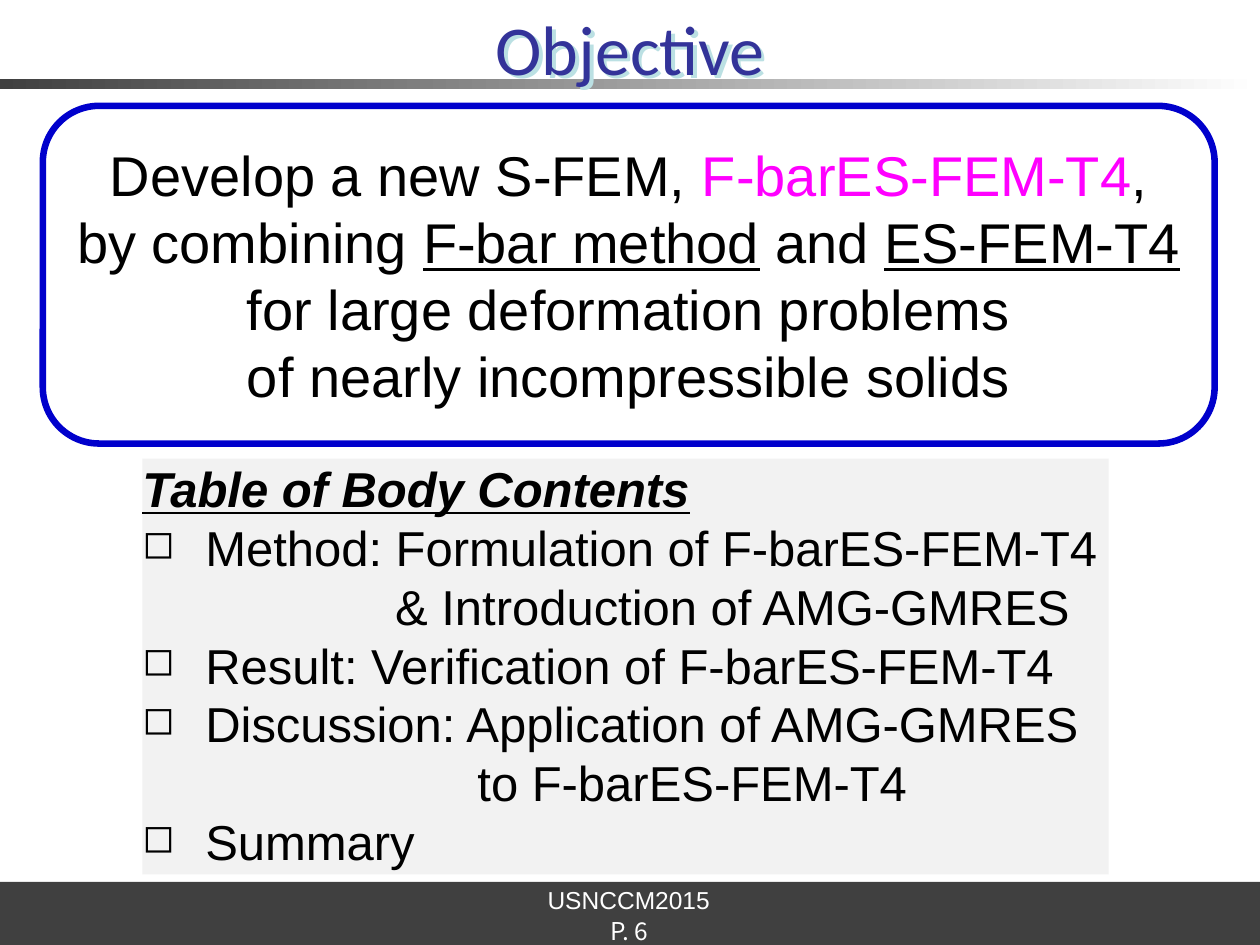
from dataclasses import dataclass

from lxml import etree
from pptx import Presentation
from pptx.dml.color import RGBColor
from pptx.enum.shapes import MSO_SHAPE
from pptx.enum.text import MSO_ANCHOR, PP_ALIGN
from pptx.oxml.ns import qn
from pptx.util import Pt

RECT, ROUND = MSO_SHAPE.RECTANGLE, MSO_SHAPE.ROUNDED_RECTANGLE
TOP, MIDDLE = MSO_ANCHOR.TOP, MSO_ANCHOR.MIDDLE
LEFT, CENTER = PP_ALIGN.LEFT, PP_ALIGN.CENTER


@dataclass(frozen=True)
class Theme:
    dark: str = "404040"
    white: str = "FFFFFF"
    black: str = "000000"
    title: str = "333399"
    title_shadow: str = "BBE0E3"
    frame: str = "0000CC"
    accent: str = "FF00FF"
    panel: str = "F2F2F2"
    body_font: str = "Arial"
    title_font: str = "Calibri"
    page_font: str = "Noto Sans CJK JP"
    title_size: int = 40
    goal_size: int = 32
    list_size: int = 28
    footer_size: int = 14


T = Theme()


def rgb(value):
    return RGBColor.from_string(value)


def add_box(s, kind, x, y, w, h, fill=None, line=None):
    sp = s.shapes.add_shape(kind, Pt(x), Pt(y), Pt(w), Pt(h))
    sp.shadow.inherit = False
    if fill:
        sp.fill.solid()
        sp.fill.fore_color.rgb = rgb(fill)
    else:
        sp.fill.background()
    if line:
        sp.line.color.rgb = rgb(line)
        sp.line.width = Pt(3.75)
    else:
        sp.line.fill.background()
    return sp


def add_title_bar(s):
    sp = add_box(s, RECT, 0, 45.36, 720, 5.76)
    sp.fill.gradient()
    sp.fill.gradient_angle = 0
    for stop, color in zip(sp.fill.gradient_stops, (T.dark, T.white)):
        stop.color.rgb = rgb(color)


def set_frame(sp, anchor=TOP, inset=(0, 0), wrap=True):
    tf = sp.text_frame
    tf.word_wrap = wrap
    tf.vertical_anchor = anchor
    tf.margin_left = tf.margin_right = Pt(inset[0])
    tf.margin_top = tf.margin_bottom = Pt(inset[1])
    return tf


def add_run(p, text, size, font=T.body_font, color=T.black,
            bold=False, italic=False, underline=False):
    for i, line in enumerate(text.split("\n")):
        if i:
            p.add_line_break()
        if line:
            r = p.add_run()
            r.text = line
            r.font.size = Pt(size)
            r.font.name = font
            r.font.color.rgb = rgb(color)
            r.font.bold = bold
            r.font.italic = italic
            r.font.underline = underline


def add_label(s, x, y, w, h, text, size, font, color, **frame):
    sp = s.shapes.add_textbox(Pt(x), Pt(y), Pt(w), Pt(h))
    p = set_frame(sp, **frame).paragraphs[0]
    p.alignment = CENTER
    add_run(p, text, size, font, color)
    return sp


def add_text_shadow(sp, color):
    effects = etree.SubElement(sp._element.spPr, qn("a:effectLst"))
    shadow = etree.SubElement(effects, qn("a:outerShdw"),
                              dist=str(Pt(2.83)), dir="2700000", algn="ctr")
    etree.SubElement(shadow, qn("a:srgbClr"), val=color)


def set_indent(p, left, bullet):
    pPr = p._p.get_or_add_pPr()
    pPr.set("marL", str(Pt(left)))
    pPr.set("indent", str(Pt(-36 if bullet else 0)))
    if bullet:
        color = etree.SubElement(pPr, qn("a:buClr"))
        etree.SubElement(color, qn("a:srgbClr"), val=T.black)
        etree.SubElement(pPr, qn("a:buSzPct"), val="80000")
        etree.SubElement(pPr, qn("a:buChar"), char="◻")


def add_goal(s):
    sp = add_box(s, ROUND, 24.48, 60.48, 669.6, 192.96, line=T.frame)
    p = set_frame(sp, MIDDLE, (7.2, 2.88)).paragraphs[0]
    p.alignment = CENTER
    for text, style in (
        ("Develop a new S-FEM, ", {}),
        ("F-barES-FEM-T4", {"color": T.accent}),
        (",\nby combining ", {}),
        ("F-bar method", {"underline": True}),
        (" and ", {}),
        ("ES-FEM-T4", {"underline": True}),
        ("\nfor large deformation problems\nof nearly incompressible solids", {}),
    ):
        add_run(p, text, T.goal_size, **style)


def add_contents(s):
    sp = add_box(s, RECT, 81.36, 262.08, 552.24, 237.6, fill=T.panel)
    tf = set_frame(sp, wrap=False)
    p = tf.paragraphs[0]
    p.alignment = LEFT
    add_run(p, "Table of Body Contents", T.list_size,
            bold=True, italic=True, underline=True)
    for text, left, bullet in (
        ("Method: Formulation of F-barES-FEM-T4", 36, True),
        ("& Introduction of AMG-GMRES", 144.5, False),
        ("Result: Verification of F-barES-FEM-T4", 36, True),
        ("Discussion: Application of AMG-GMRES", 36, True),
        ("to F-barES-FEM-T4", 191.5, False),
        ("Summary", 36, True),
    ):
        p = tf.add_paragraph()
        set_indent(p, left, bullet)
        p.alignment = LEFT
        add_run(p, text, T.list_size)


def add_footer(s):
    add_box(s, RECT, 0, 504, 720, 36, fill=T.dark)
    frame = {"anchor": MIDDLE, "inset": (2.88, 2.88)}
    sp = add_label(s, 309.6, 504, 99.36, 21.6, "USNCCM2015", T.footer_size,
                   T.body_font, T.white, wrap=False, **frame)
    sp.text_frame.paragraphs[0].line_spacing = 0.93
    add_label(s, 318.24, 524.16, 82.8, 15.84, "P. 6", T.footer_size,
              T.page_font, T.white, **frame)


def main():
    prs = Presentation()
    prs.slide_width, prs.slide_height = Pt(720), Pt(540)
    s = prs.slides.add_slide(prs.slide_layouts[6])
    add_title_bar(s)
    add_footer(s)
    title = add_label(s, 0, 2.88, 720, 48.96, "Objective",
                      T.title_size, T.title_font, T.title)
    add_text_shadow(title, T.title_shadow)
    add_goal(s)
    add_contents(s)
    prs.save("out.pptx")


if __name__ == "__main__":
    main()
